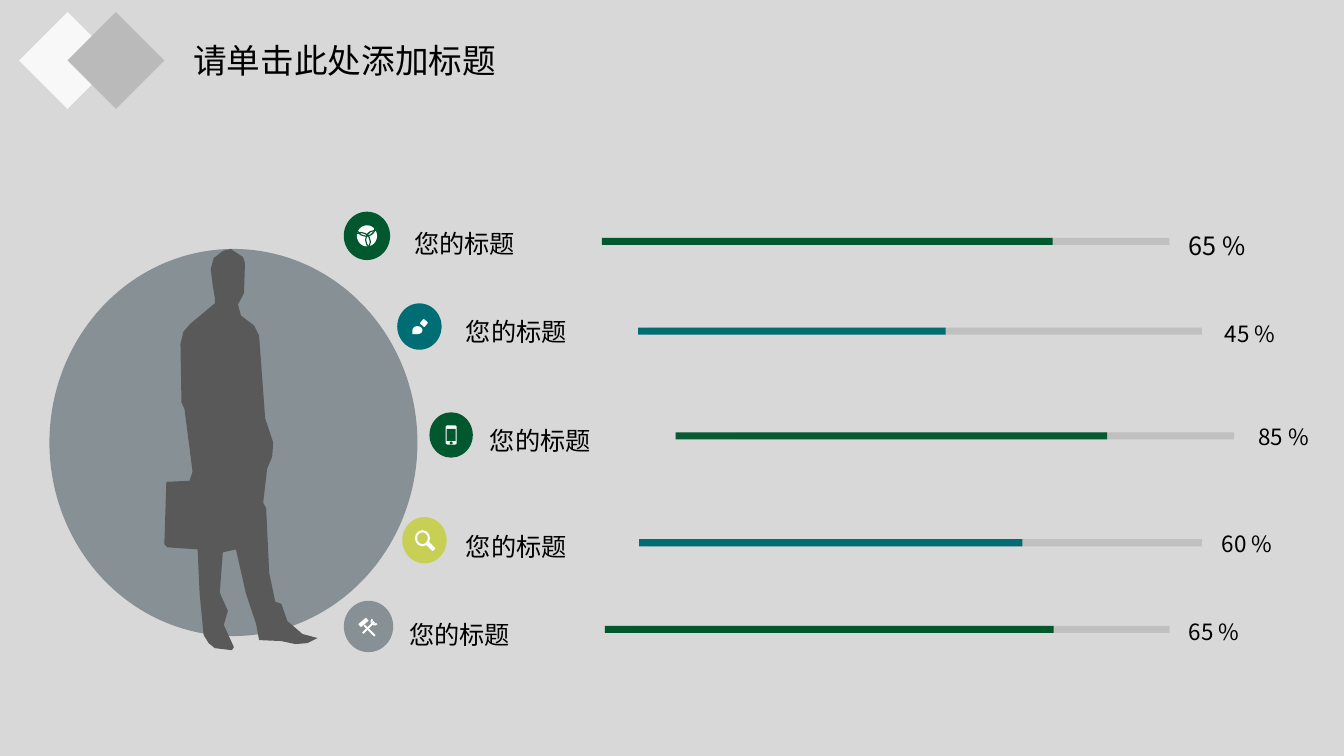
from collections import namedtuple

from lxml import etree
from pptx import Presentation
from pptx.dml.color import RGBColor
from pptx.enum.shapes import MSO_SHAPE as Shape
from pptx.enum.text import MSO_AUTO_SIZE as AutoSize
from pptx.oxml.ns import qn
from pptx.util import Inches, Pt

FONT = "Noto Sans CJK SC"
COLORS = {
    "paper": "F8F8F8", "backdrop": "D8D8D8", "diamond": "BABABA",
    "slate": "879094", "figure": "595959", "track": "7C7C7C",
    "green": "01582F", "deep_green": "055B32", "teal": "006D75",
    "lime": "C7D054", "white": "FFFFFF", "text": "000000",
}
TITLE_FORMAT = {"word_wrap": True, "auto_size": AutoSize.SHAPE_TO_FIT_TEXT}
ROW_FORMAT = TITLE_FORMAT | {"margin_left": 0, "margin_top": 0,
                             "margin_right": 0, "margin_bottom": 0}

prs = Presentation()
prs.slide_width, prs.slide_height = Inches(13.33), Inches(7.5)
slide = prs.slides.add_slide(prs.slide_layouts[6])
slide.background.fill.solid()
slide.background.fill.fore_color.rgb = RGBColor.from_string(COLORS["paper"])


def add_filled(preset, box, color, rotation=0, adjustment=None):
    part = slide.shapes.add_shape(preset, *map(Inches, box))
    part.shadow.inherit = False
    part.fill.solid()
    part.fill.fore_color.rgb = RGBColor.from_string(COLORS[color])
    part.line.fill.background()
    part.rotation = rotation
    if adjustment is not None:
        part.adjustments[0] = adjustment
    return part


def add_text(text, box, size, frame_format, spacing=None):
    frame = slide.shapes.add_textbox(*map(Inches, box)).text_frame
    for key, value in frame_format.items():
        setattr(frame, key, value)
    paragraph = frame.paragraphs[0]
    paragraph.line_spacing = spacing
    run = paragraph.add_run()
    run.text = text
    for key, value in {"size": Pt(size), "name": FONT}.items():
        setattr(run.font, key, value)
    run.font.color.rgb = RGBColor.from_string(COLORS["text"])
    etree.SubElement(run.font._element, qn("a:ea"), typeface=FONT)


# Backdrop and heading
add_filled(Shape.RECTANGLE, (0, 0, 13.33, 7.5), "backdrop")
for left, color in ((0.33, "paper"), (0.81, "diamond")):
    add_filled(Shape.RECTANGLE, (left, 0.26, 0.68, 0.68), color, rotation=45)
add_text("请单击此处添加标题", (1.82, 0.35, 5.33, 0.5), 24, TITLE_FORMAT)

# Man with briefcase before the large disc: one outline, walked
# counterclockwise from the neck, in hundredths of an inch
add_filled(Shape.OVAL, (0.49, 2.47, 3.65, 3.84), "slate")
man = {
    "left shoulder": [(213, 295), (213, 301), (189, 321), (182, 329)],
    "left sleeve": [(179, 341), (180, 399), (183, 406), (191, 468)],
    "briefcase": [(188, 477), (165, 478), (163, 540), (166, 543), (196, 545)],
    "left leg": [(198, 589), (202, 630)],
    "left shoe": [(207, 638), (213, 643), (230, 645), (232, 642), (222, 620)],
    "inner legs": [(226, 606), (218, 588), (221, 548), (234, 545), (244, 589)],
    "right shoe": [(254, 619), (257, 635), (279, 636), (293, 639), (305, 638),
                   (315, 633), (300, 629), (285, 616), (279, 599)],
    "right leg": [(273, 597), (267, 568), (264, 504), (261, 499)],
    "right sleeve": [(265, 465), (270, 453), (271, 439), (263, 415), (257, 333)],
    "right shoulder": [(252, 323), (239, 313), (236, 302)],
    "head": [(242, 291), (243, 261), (241, 255), (229, 247), (221, 249),
             (212, 256), (209, 267), (211, 283)],
}
outline = [point for section in man.values() for point in section]
builder = slide.shapes.build_freeform(*outline[0], scale=Inches(0.01))
builder.add_line_segments(outline[1:], close=True)
silhouette = builder.convert_to_shape()
silhouette.shadow.inherit = False
silhouette.fill.solid()
silhouette.fill.fore_color.rgb = RGBColor.from_string(COLORS["figure"])
silhouette.line.fill.background()

# Icons: preset parts placed by their centre's offset from the disc's centre.
# The colour "disc" stands for the colour of the disc behind the icon.
Part = namedtuple("Part", "preset dx dy width height color rotation adjustment",
                  defaults=("white", 0, None))
ICONS = {
    "globe": [
        Part(Shape.OVAL, 0, 0, 0.2, 0.21),
        Part(Shape.DONUT, -0.06, 0.06, 0.2, 0.2, "disc", 0, 0.06),
        Part(Shape.DONUT, 0.08, 0.04, 0.2, 0.2, "disc", 0, 0.06),
        Part(Shape.DONUT, -0.01, -0.09, 0.2, 0.2, "disc", 0, 0.06),
    ],
    "brush": [
        Part(Shape.ROUNDED_RECTANGLE, 0.045, -0.035, 0.06, 0.06, rotation=40),
        Part(Shape.TEAR, -0.02, 0.035, 0.1, 0.08, rotation=180),
    ],
    "phone": [
        Part(Shape.ROUNDED_RECTANGLE, 0, 0, 0.11, 0.19),
        Part(Shape.RECTANGLE, 0, 0, 0.09, 0.12, "disc"),
        Part(Shape.OVAL, 0, 0.08, 0.03, 0.03, "disc"),
    ],
    "magnifier": [
        Part(Shape.DONUT, -0.02, -0.02, 0.15, 0.16, adjustment=0.14),
        Part(Shape.ROUNDED_RECTANGLE, 0.06, 0.06, 0.1, 0.04, rotation=45),
    ],
    "tools": [
        Part(Shape.RECTANGLE, 0, 0.01, 0.16, 0.02, rotation=-45),
        Part(Shape.BLOCK_ARC, 0.06, -0.05, 0.08, 0.08, rotation=225),
        Part(Shape.RECTANGLE, 0.01, 0.04, 0.15, 0.02, rotation=45),
        Part(Shape.RECTANGLE, -0.05, -0.04, 0.1, 0.04, rotation=-40),
    ],
}

# Progress rows bulge to the right: "step" counts the shifts of a row
BAR_HEIGHT = 0.07
TRACK_RIGHT, TRACK_SHIFT = 11.6, 0.32
Row = namedtuple("Row", "icon step disc_color disc_left disc_top disc_width "
                 "label_left label_top label_width track_left "
                 "bar_left bar_top bar_width bar_color "
                 "share share_left share_top share_size share_height")
rows = [
    Row("globe", 0, "green", 3.41, 2.1, 0.46, 4.11, 2.21, 2.54, 7.16,
        5.97, 2.36, 4.47, "green", "65 %", 11.79, 2.23, 18, 0.33),
    Row("brush", 1, "teal", 3.94, 3.01, 0.44, 4.62, 3.08, 3.35, 6.43,
        6.33, 3.25, 3.05, "teal", "45 %", 12.15, 3.12, 16, 0.29),
    Row("phone", 2, "green", 4.26, 4.09, 0.43, 4.86, 4.16, 3.12, 7.31,
        6.7, 4.29, 4.28, "deep_green", "85 %", 12.48, 4.14, 16, 0.29),
    Row("magnifier", 1, "lime", 3.99, 5.13, 0.44, 4.62, 5.21, 3.18, 6.42,
        6.34, 5.35, 3.8, "teal", "60 %", 12.12, 5.21, 16, 0.29),
    Row("tools", 0, "slate", 3.41, 5.96, 0.49, 4.06, 6.08, 3.82, 6.29,
        6, 6.21, 4.45, "green", "65 %", 11.79, 6.08, 16, 0.29),
]
for row in rows:
    # Translucent track under the solid bar
    track_width = TRACK_RIGHT + row.step * TRACK_SHIFT - row.track_left
    track = add_filled(Shape.RECTANGLE, (row.track_left, row.bar_top,
                                         track_width, BAR_HEIGHT), "track")
    track_rgb = track._element.spPr.find(qn("a:solidFill"))[0]
    etree.SubElement(track_rgb, qn("a:alpha"), val="25000")
    add_filled(Shape.RECTANGLE, (row.bar_left, row.bar_top,
                                 row.bar_width, BAR_HEIGHT), row.bar_color)

    # Label and share
    add_text("您的标题", (row.label_left, row.label_top, row.label_width, 0.33),
             18, ROW_FORMAT, 1.2)
    add_text(row.share, (row.share_left, row.share_top, 1.17, row.share_height),
             row.share_size, ROW_FORMAT, 1.2)

    # Disc, a little taller than wide, with its icon
    disc_height = row.disc_width + 0.02
    add_filled(Shape.OVAL, (row.disc_left, row.disc_top,
                            row.disc_width, disc_height), row.disc_color)
    center_x = row.disc_left + row.disc_width / 2
    center_y = row.disc_top + disc_height / 2
    for part in ICONS[row.icon]:
        box = (center_x + part.dx - part.width / 2,
               center_y + part.dy - part.height / 2, part.width, part.height)
        color = row.disc_color if part.color == "disc" else part.color
        add_filled(part.preset, box, color, part.rotation, part.adjustment)

prs.save("out.pptx")
